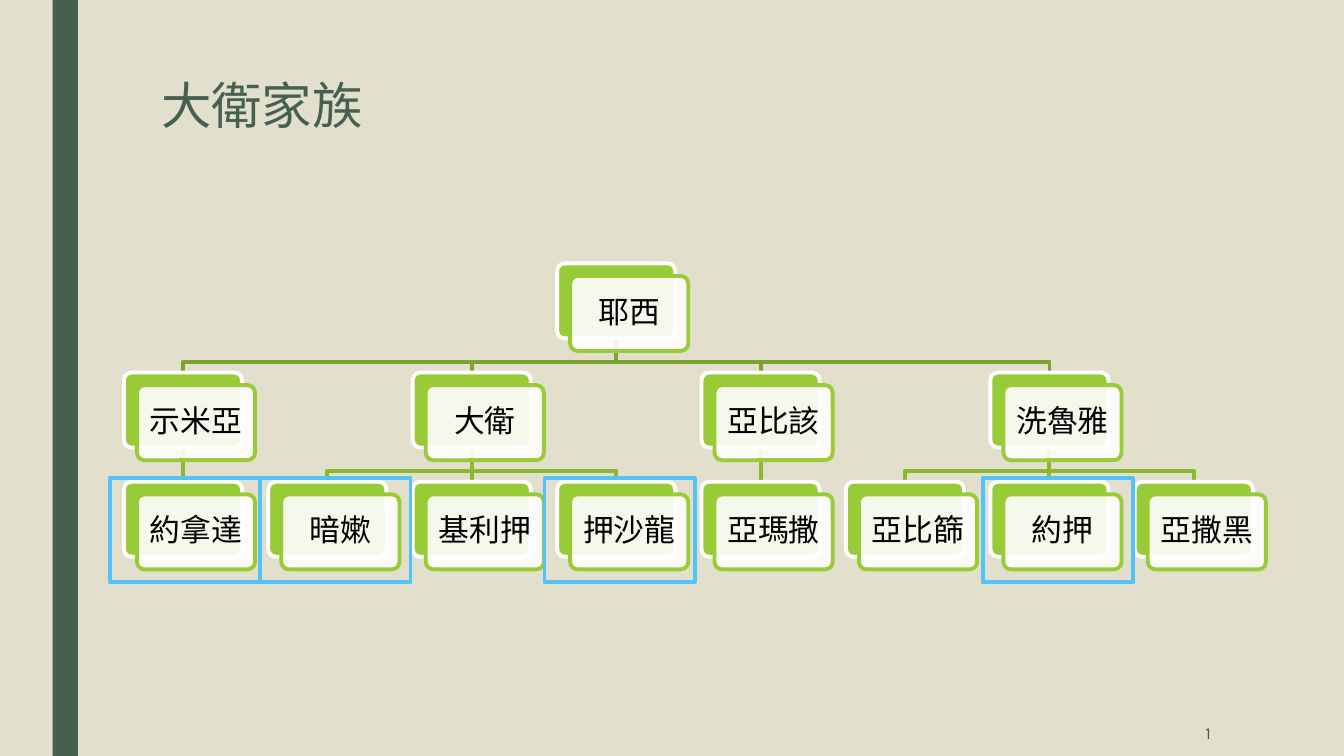
import lxml.etree
import pptx
import pptx.dml.color
import pptx.enum.shapes
import pptx.enum.text
import pptx.oxml.ns
import pptx.util

Pt = pptx.util.Pt
SHAPE = pptx.enum.shapes.MSO_SHAPE
ALIGN = pptx.enum.text.PP_ALIGN
ANCHOR = pptx.enum.text.MSO_ANCHOR

GREEN, DARK_GREEN, SKY = "99CB38", "455F51", "51C3F9"
BRANCH_COLORS = ["7BA32D", "8BB833"]
STROKE = 2.75
CARD_W, CARD_H = 84.4, 53.6
COLUMN_STEP, ROW_STEP = 103.15, 78
FRONT_DX, FRONT_DY = 9.3, 9
BEND = 16.7

FAMILY = ("耶西", [
    ("示米亞", [("約拿達", [])]),
    ("大衛", [("暗嫰", []), ("基利押", []), ("押沙龍", [])]),
    ("亞比該", [("亞瑪撒", [])]),
    ("洗魯雅", [("亞比篩", []), ("約押", []), ("亞撒黑", [])]),
])


def rgb(value):
    """Turn a hex string into a colour."""
    return pptx.dml.color.RGBColor.from_string(value)


def add_box(slide, kind, left, top, width, height, fill=None, line=None):
    """Add a shadowless shape with an optional fill and outline."""
    box = slide.shapes.add_shape(kind, Pt(left), Pt(top), Pt(width), Pt(height))
    box.shadow.inherit = False
    if fill:
        box.fill.solid()
        box.fill.fore_color.rgb = rgb(fill)
    else:
        box.fill.background()
    if line:
        box.line.color.rgb = rgb(line)
        box.line.width = Pt(STROKE)
    else:
        box.line.fill.background()
    return box


def write(box, text, size, font, color, align, anchor):
    """Write one formatted paragraph into a shape."""
    frame = box.text_frame
    frame.word_wrap = True
    frame.vertical_anchor = anchor
    frame.text = text
    paragraph = frame.paragraphs[0]
    paragraph.alignment = align
    paragraph.line_spacing = 0.9
    run_font = paragraph.runs[0].font
    run_font.size = Pt(size)
    run_font.name = font
    run_font.color.rgb = rgb(color)


def add_label(slide, left, top, width, height, *style):
    """Add a text box in the given style."""
    label = slide.shapes.add_textbox(Pt(left), Pt(top), Pt(width), Pt(height))
    write(label, *style)


def add_card(slide, name, left, top):
    """Draw a person as a green card behind a translucent name card."""
    back = add_box(slide, SHAPE.ROUNDED_RECTANGLE, left, top, CARD_W, CARD_H, GREEN, "FFFFFF")
    front = add_box(slide, SHAPE.ROUNDED_RECTANGLE, left + FRONT_DX, top + FRONT_DY,
                    CARD_W, CARD_H, "FFFFFF", GREEN)
    for card in (back, front):
        card.adjustments[0] = 0.1
    white = front.fill._xPr.find(".//" + pptx.oxml.ns.qn("a:srgbClr"))
    lxml.etree.SubElement(white, pptx.oxml.ns.qn("a:alpha")).set("val", "90000")
    front.text_frame.margin_left = front.text_frame.margin_right = Pt(6)
    write(front, name, 22, "Karla", "000000", ALIGN.CENTER, ANCHOR.MIDDLE)
    return back


def add_branch(slide, parent, child, color):
    """Join a parent card to a child card, beneath all cards."""
    start_x, start_y = parent.left + parent.width // 2, parent.top + parent.height
    end_x, end_y = child.left + child.width // 2, child.top
    if abs(start_x - end_x) < Pt(1):
        branch = slide.shapes.add_connector(
            pptx.enum.shapes.MSO_CONNECTOR.STRAIGHT, start_x, start_y, end_x, end_y)
        branch.begin_connect(parent, 2)
        branch.end_connect(child, 0)
        lxml.etree.SubElement(branch._element.spPr, pptx.oxml.ns.qn("a:effectLst"))
    else:
        bend_y = start_y + Pt(BEND)
        outline = slide.shapes.build_freeform(start_x, start_y)
        outline.add_line_segments([(start_x, bend_y), (end_x, bend_y), (end_x, end_y)], close=False)
        branch = outline.convert_to_shape()
        branch.fill.background()
        branch.shadow.inherit = False
    branch.line.color.rgb = rgb(color)
    branch.line.width = Pt(STROKE)
    slide.shapes._spTree.insert(2, branch._element)


def add_family(slide, person, left, top, first_column=0, level=0):
    """Draw a person centred over all descendants; return card, column and next free column."""
    name, children = person
    cards, columns, next_column = [], [], first_column
    for child in children:
        card, column, next_column = add_family(slide, child, left, top, next_column, level + 1)
        cards.append(card)
        columns.append(column)
    if children:
        own_column = (columns[0] + columns[-1]) / 2
    else:
        own_column, next_column = first_column, first_column + 1
    own_card = add_card(slide, name, left + own_column * COLUMN_STEP, top + level * ROW_STEP)
    for card in cards:
        add_branch(slide, own_card, card, BRANCH_COLORS[level])
    return own_card, own_column, next_column


def add_highlights(slide, lefts, top, width, height):
    """Outline selected grandsons in blue."""
    for left in lefts:
        add_box(slide, SHAPE.RECTANGLE, left, top, width, height, line=SKY)


def add_frame(slide, width, height):
    """Set the background, side band, title and page number."""
    slide.background.fill.solid()
    slide.background.fill.fore_color.rgb = rgb("E2DFCC")
    add_box(slide, SHAPE.RECTANGLE, 37.6, 0, 18, height, DARK_GREEN)
    add_label(slide, 108, 54, width - 189, 86.4,
              "大衛家族", 36, "Calibri", DARK_GREEN, ALIGN.LEFT, ANCHOR.TOP)
    add_label(slide, width - 214, height - 31.7, 126, 31.7,
              "1", 12, "Karla", DARK_GREEN, ALIGN.RIGHT, ANCHOR.MIDDLE)


def main():
    """Build and save the family tree slide."""
    deck = pptx.Presentation()
    deck.slide_width, deck.slide_height = Pt(960), Pt(540)
    slide = deck.slides.add_slide(deck.slide_layouts[6])
    add_frame(slide, 960, 540)
    add_family(slide, FAMILY, 88.5, 188.1)
    add_highlights(slide, [78.3, 185.8, 388.9, 702], 341.6, 107.4, 74)
    deck.save("out.pptx")


if __name__ == "__main__":
    main()
